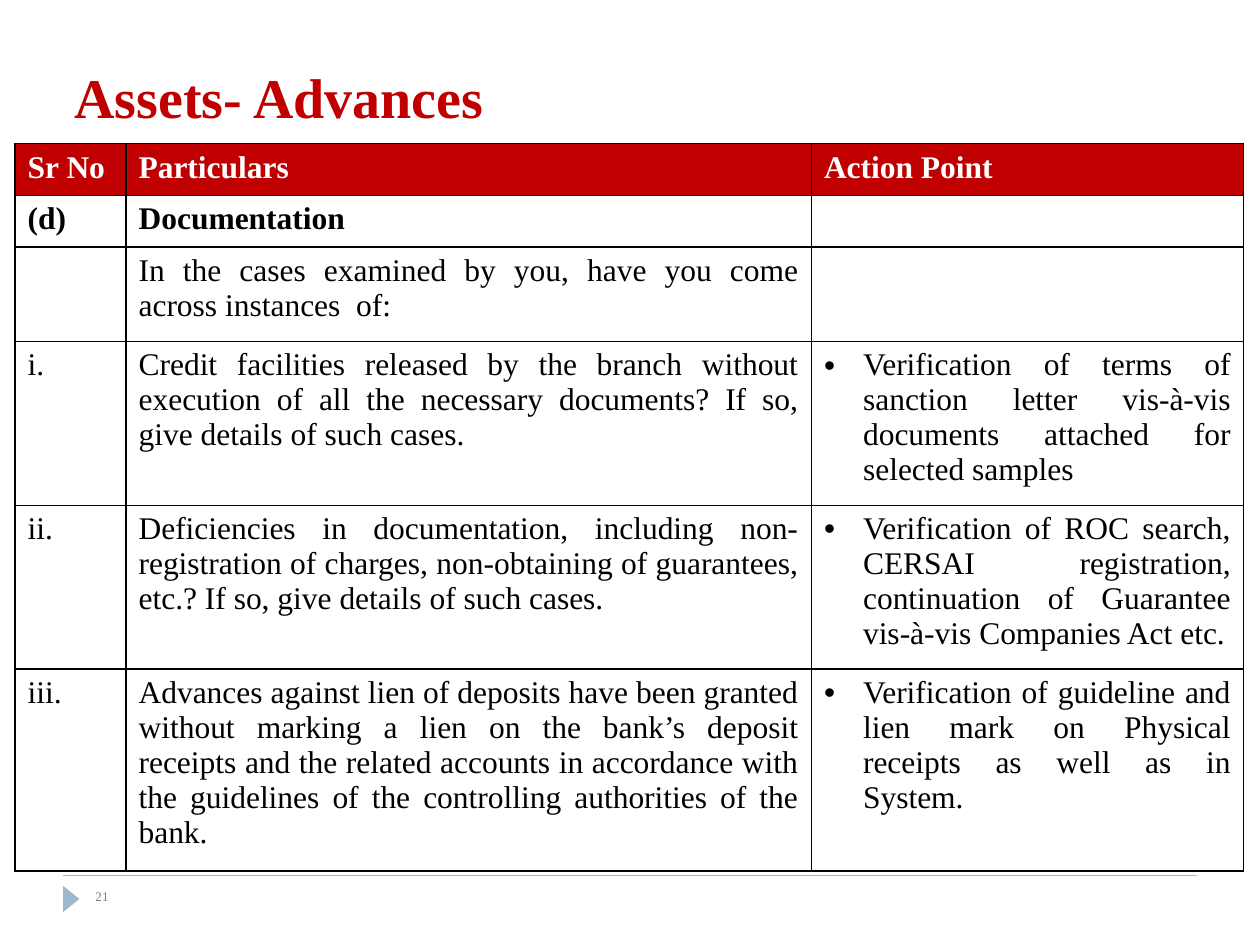
from dataclasses import dataclass

from lxml.etree import SubElement
from pptx import Presentation
from pptx.dml.color import RGBColor as Color
from pptx.enum.shapes import MSO_CONNECTOR as Connector, MSO_SHAPE as Shape
from pptx.enum.text import MSO_ANCHOR as Anchor, PP_ALIGN as Align
from pptx.oxml.ns import qn
from pptx.util import Inches, Pt


@dataclass(frozen=True)
class Theme:
    font: str = "Times New Roman"
    red: str = "C00000"
    black: str = "000000"
    white: str = "FFFFFF"
    grey: str = "808080"
    blue: str = "9FB8CD"
    title_size: float = 32
    table_size: float = 18
    number_size: float = 7.5
    rule_width: float = 0.75
    border_width: float = 1
    bullet_indent: float = 0.31


THEME = Theme()
TITLE_ONLY = 5
COLUMNS = (0.88, 5.44, 3.43)
HEIGHTS = (0.41, 0.41, 0.75, 1.21, 1.21, 1.48)
HEADING_ROWS = 2
ACTION_COLUMN = 2
ROWS = (
    ("Sr No ", "Particulars", "Action Point"),
    ("(d)", "Documentation", ""),
    ("", "In the cases examined by you, have you come across instances  of:", ""),
    ("i.",
     "Credit facilities released by the branch without execution of all the "
     "necessary documents? If so, give details of such cases.",
     "Verification of terms of sanction letter vis-à-vis documents attached "
     "for selected samples"),
    ("ii.",
     "Deficiencies in documentation, including non-registration of charges, "
     "non-obtaining of guarantees, etc.? If so, give details of such cases. ",
     "Verification of ROC search, CERSAI registration, continuation of "
     "Guarantee vis-à-vis Companies Act etc."),
    ("iii.",
     "Advances against lien of deposits have been granted without marking a "
     "lien on the bank’s deposit receipts and the related accounts in "
     "accordance with the guidelines of the controlling authorities of the bank.",
     "Verification of guideline and lien mark on Physical receipts as well as "
     "in System."),
)


def write(para, text, size, color, bold=False, align=Align.LEFT):
    """Put one formatted run in a paragraph."""
    para.alignment = align
    span = para.add_run()
    span.text = text
    formats = {"name": THEME.font, "size": Pt(size), "bold": bold}
    for name, value in formats.items():
        setattr(span.font, name, value)
    span.font.color.rgb = Color.from_string(color)


def place(box, left, top, width, height):
    frame = {"left": left, "top": top, "width": width, "height": height}
    for name, value in frame.items():
        setattr(box, name, Inches(value))


def add_title(page, text):
    title = page.shapes.title
    place(title, 0.49, 0.17, 9, 0.91)
    title.text_frame.vertical_anchor = Anchor.BOTTOM
    write(title.text_frame.paragraphs[0], text, THEME.title_size, THEME.red, bold=True)


def add_bullet(para):
    props = para._p.get_or_add_pPr()
    indent = Inches(THEME.bullet_indent)
    props.set("marL", str(indent))
    props.set("indent", str(-indent))
    SubElement(props, qn("a:buFont"), typeface="Arial")
    SubElement(props, qn("a:buChar"), char="•")


def add_borders(cell):
    props = cell._tc.get_or_add_tcPr()
    for side in ("lnL", "lnR", "lnT", "lnB"):
        line = SubElement(props, qn(f"a:{side}"), w=str(Pt(THEME.border_width)))
        fill = SubElement(line, qn("a:solidFill"))
        SubElement(fill, qn("a:srgbClr"), val=THEME.black)


def fill_cell(cell, text, row, column):
    add_borders(cell)
    header = row == 0
    if header:
        cell.fill.solid()
        cell.fill.fore_color.rgb = Color.from_string(THEME.red)
    else:
        cell.fill.background()
    if not text:
        return
    para = cell.text_frame.paragraphs[0]
    write(para, text, THEME.table_size, THEME.white if header else THEME.black,
          bold=row < HEADING_ROWS, align=Align.JUSTIFY)
    if column == ACTION_COLUMN and row >= HEADING_ROWS:
        add_bullet(para)


def add_checklist(page):
    table = page.shapes.add_table(
        len(ROWS), len(COLUMNS), Inches(0.12), Inches(1.14),
        Inches(sum(COLUMNS)), Inches(sum(HEIGHTS))).table
    for column, width in zip(table.columns, COLUMNS):
        column.width = Inches(width)
    for row, height in zip(table.rows, HEIGHTS):
        row.height = Inches(height)
    for row, texts in enumerate(ROWS):
        for column, text in enumerate(texts):
            fill_cell(table.cell(row, column), text, row, column)


def add_footer(page, number):
    # Rule across the page
    rule = page.shapes.add_connector(
        Connector.STRAIGHT, Inches(0.5), Inches(6.95), Inches(9.5), Inches(6.95))
    rule.line.color.rgb = Color.from_string(THEME.blue)
    rule.line.width = Pt(THEME.rule_width)
    SubElement(rule._element.spPr, qn("a:effectLst"))

    # Marker pointing at the page number
    marker = page.shapes.add_shape(Shape.ISOSCELES_TRIANGLE, 0, 0, 0, 0)
    place(marker, 0.46, 7.07, 0.21, 0.13)
    marker.rotation = 90
    marker.shadow.inherit = False
    marker.fill.solid()
    marker.fill.fore_color.rgb = Color.from_string(THEME.blue)
    marker.line.fill.background()

    # Page number
    box = page.shapes.add_textbox(0, 0, 0, 0)
    place(box, 0.66, 7, 4.33, 0.3)
    box.text_frame.word_wrap = True
    write(box.text_frame.paragraphs[0], number, THEME.number_size, THEME.grey)


def main():
    deck = Presentation()
    deck.slide_width, deck.slide_height = Inches(10), Inches(7.5)
    page = deck.slides.add_slide(deck.slide_layouts[TITLE_ONLY])
    add_footer(page, "21")
    add_title(page, "Assets- Advances")
    add_checklist(page)
    deck.save("out.pptx")


if __name__ == "__main__":
    main()
